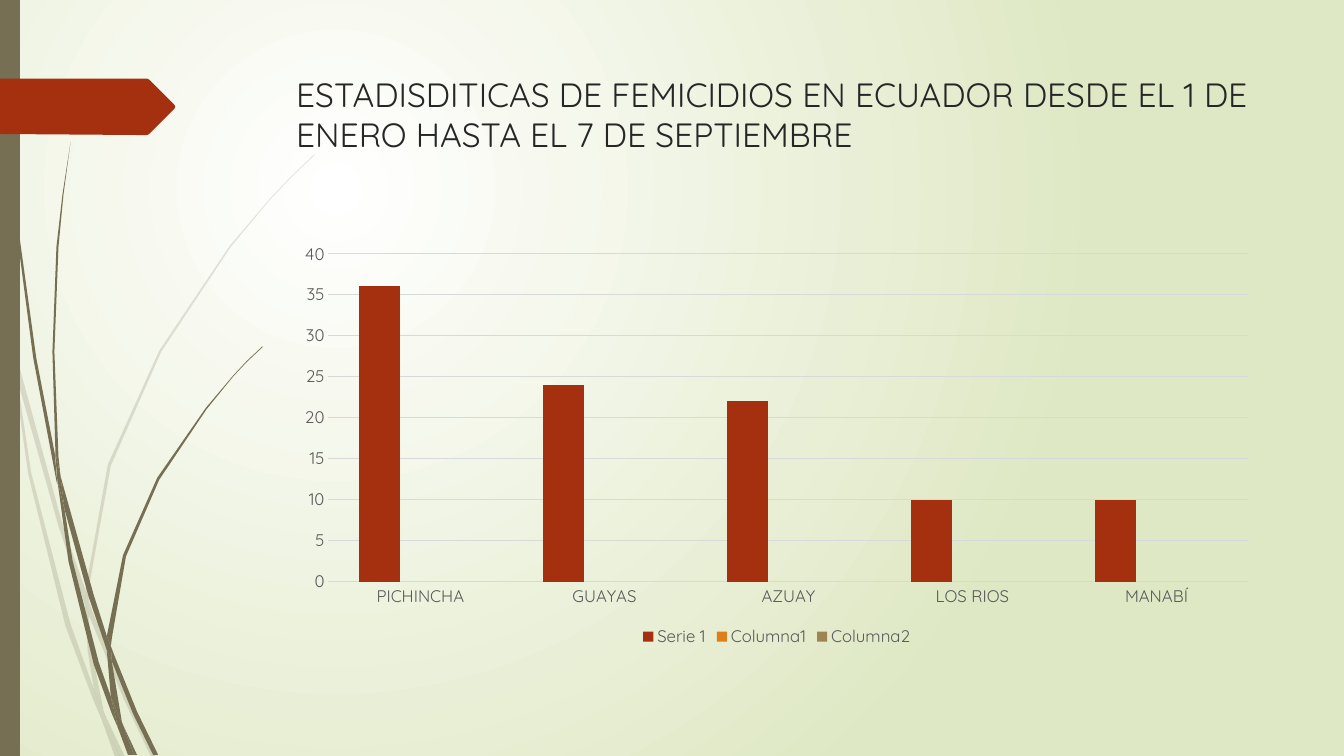
"""Build the slide on femicide statistics in Ecuador."""
from dataclasses import dataclass

from lxml import etree
from pptx import Presentation, util as u
from pptx.chart import data as chart_data
from pptx.dml.color import RGBColor
from pptx.enum import chart as ch, shapes, text
from pptx.oxml import ns


@dataclass(frozen=True)
class Theme:
    font: str = "Quicksand"
    title_size: int = 24
    label_size: int = 12
    title: str = "262626"
    label: str = "595959"
    grid: str = "D9D9D9"
    stem: str = "766F54"
    accent: str = "A53010"
    bars: tuple = ("A53010", "DE7E18", "9F8351")
    backdrop: tuple = ("FFFFFF", "DFE8C4")
    pale: int = 20


HUNDREDTH_INCH = u.Cm(0.0254)

PALE_STEMS = [
    [(11, 350), (9, 322), (0, 282), (0, 299), (10, 344)],
    [(58, 522), (84, 599), (85, 586), (62, 520), (14, 345), (17, 376)],
    [(92, 607), (88, 596), (88, 610), (123, 694), (150, 751), (155, 751), (127, 692)],
    [(119, 751), (124, 751), (105, 711)],
    [(93, 683), (70, 619), (31, 469), (17, 376), (11, 350), (28, 470), (65, 621), (92, 693),
     (101, 714), (99, 707)],
    [(84, 599), (87, 646), (93, 683), (96, 692), (105, 711), (103, 706), (91, 646), (88, 610),
     (88, 608)],
    [(88, 584), (110, 462), (160, 349), (229, 245), (268, 198), (290, 175), (312, 154),
     (312, 153), (289, 175), (268, 197), (228, 244), (158, 348), (107, 461), (85, 584),
     (85, 586), (88, 596)],
    [(101, 714), (114, 751), (119, 751)],
    [(88, 608), (88, 610), (88, 596), (85, 586), (84, 599)],
    [(96, 692), (93, 683), (99, 707), (101, 714), (119, 751), (105, 711)],
]

DARK_STEMS = [
    [(7, 110), (17, 233), (33, 355), (56, 477), (57, 481), (55, 457), (55, 453), (36, 355),
     (19, 232), (8, 109), (5, 48), (4, 0), (3, 0), (4, 48)],
    [(88, 592), (106, 645), (106, 633), (106, 631), (93, 590), (60, 472), (64, 505)],
    [(113, 649), (110, 641), (111, 656), (132, 708), (152, 749), (157, 749), (136, 706)],
    [(110, 691), (98, 657), (72, 556), (64, 505), (57, 477), (68, 557), (93, 659), (111, 708),
     (117, 722), (116, 717)],
    [(60, 472), (58, 453), (54, 349), (58, 245), (63, 193), (70, 141), (62, 193), (56, 245),
     (52, 349), (55, 449)],
    [(133, 749), (136, 749), (122, 719)],
    [(57, 477), (64, 505), (60, 472), (55, 449), (55, 453)],
    [(111, 633), (125, 552), (158, 476), (205, 406), (231, 374), (245, 359), (261, 344),
     (260, 344), (245, 358), (231, 373), (204, 405), (156, 474), (122, 551), (106, 631),
     (110, 641)],
    [(117, 722), (127, 749), (131, 749)],
    [(106, 645), (110, 691), (116, 706), (122, 719), (121, 716), (111, 656), (109, 651)],
    [(106, 645), (109, 651), (111, 656), (110, 641), (106, 631), (106, 633)],
    [(116, 706), (110, 691), (116, 717), (117, 722), (130, 749), (133, 749), (122, 719)],
]

ARROW = [(173, 108), (148, 133), (146, 134), (136, 134), (0, 133), (0, 78), (146, 78),
         (148, 79), (173, 104), (174, 106)]

TITLE = "ESTADISDITICAS DE FEMICIDIOS EN ECUADOR DESDE EL 1 DE ENERO HASTA EL 7 DE SEPTIEMBRE"
PROVINCES = ["PICHINCHA", "GUAYAS", "AZUAY", "LOS RIOS", "MANABÍ"]
SERIES = {
    "Serie 1": [36, 24, 22, 10, 10],
    "Columna1": [None] * len(PROVINCES),
    "Columna2": [None] * len(PROVINCES),
}


def format_font(font, size, color, name):
    font.size, font.name, font.bold = u.Pt(size), name, False
    font.color.rgb = RGBColor.from_string(color)


def write(frame, words, *, size, color, font, align=text.PP_ALIGN.LEFT,
          anchor=text.MSO_ANCHOR.TOP):
    frame.word_wrap = True
    frame.auto_size = text.MSO_AUTO_SIZE.NONE
    frame.vertical_anchor = anchor
    paragraph = frame.paragraphs[0]
    paragraph.alignment = align
    run = paragraph.add_run()
    run.text = words
    format_font(run.font, size, color, font)


class SlideBuilder:
    def __init__(self, slide, theme):
        self.slide, self.theme = slide, theme

    def backdrop(self):
        fill = self.slide.background.fill
        fill.gradient()
        for stop, color, position in zip(fill.gradient_stops, self.theme.backdrop, (0, 1)):
            stop.color.rgb = RGBColor.from_string(color)
            stop.position = position
        gradient = self.slide.element.find(".//" + ns.qn("a:gradFill"))
        gradient.remove(gradient.find(ns.qn("a:lin")))
        glow = etree.SubElement(gradient, ns.qn("a:path"))
        glow.set("path", "circle")
        center = etree.SubElement(glow, ns.qn("a:fillToRect"))
        for side, percent in zip("ltrb", (50, 50, 100, 100)):
            center.set(side, str(percent * 1000))

    def paint(self, shape, color, opacity=100):
        shape.shadow.inherit = False
        shape.line.fill.background()
        shape.fill.solid()
        shape.fill.fore_color.rgb = RGBColor.from_string(color)
        if opacity < 100:
            tint = shape.element.spPr.find(".//" + ns.qn("a:srgbClr"))
            etree.SubElement(tint, ns.qn("a:alpha")).set("val", str(opacity * 1000))

    def outline(self, points, color, opacity=100):
        start, *rest = points
        builder = self.slide.shapes.build_freeform(*start, scale=HUNDREDTH_INCH)
        builder.add_line_segments(rest, close=True)
        self.paint(builder.convert_to_shape(), color, opacity)

    def band(self, left, top, width, height, color):
        box = map(u.Cm, (left, top, width, height))
        self.paint(self.slide.shapes.add_shape(shapes.MSO_SHAPE.RECTANGLE, *box), color)

    def title(self, words, left, top, width, height):
        heading = self.slide.shapes.title
        heading.left, heading.top = u.Cm(left), u.Cm(top)
        heading.width, heading.height = u.Cm(width), u.Cm(height)
        write(heading.text_frame, words, size=self.theme.title_size,
              color=self.theme.title, font=self.theme.font)

    def columns(self, categories, series, left, top, width, height):
        theme = self.theme
        figures = chart_data.CategoryChartData()
        figures.categories = categories
        for name, values in series.items():
            figures.add_series(name, values)
        box = map(u.Cm, (left, top, width, height))
        chart = self.slide.shapes.add_chart(
            ch.XL_CHART_TYPE.COLUMN_CLUSTERED, *box, figures).chart
        format_font(chart.font, theme.label_size, theme.label, theme.font)
        chart.has_title = False
        chart.has_legend = True
        chart.legend.position = ch.XL_LEGEND_POSITION.BOTTOM
        chart.legend.include_in_layout = False
        format_font(chart.legend.font, theme.label_size, theme.label, theme.font)

        plot = chart.plots[0]
        plot.vary_by_categories = False
        plot.gap_width, plot.overlap = 150, 0
        for bars, color in zip(plot.series, theme.bars):
            bars.format.fill.solid()
            bars.format.fill.fore_color.rgb = RGBColor.from_string(color)

        for axis in (chart.category_axis, chart.value_axis):
            axis.major_tick_mark = axis.minor_tick_mark = ch.XL_TICK_MARK.NONE
            axis.format.line.fill.background()
            format_font(axis.tick_labels.font, theme.label_size, theme.label, theme.font)
        scale = chart.value_axis
        scale.minimum_scale, scale.maximum_scale, scale.major_unit = 0, 40, 5
        scale.has_major_gridlines = True
        grid = scale.major_gridlines.format.line
        grid.width = u.Pt(0.75)
        grid.color.rgb = RGBColor.from_string(theme.grid)


def main():
    theme = Theme()
    deck = Presentation()
    deck.slide_width, deck.slide_height = u.Cm(33.87), u.Cm(19.05)
    page = SlideBuilder(deck.slides.add_slide(deck.slide_layouts[5]), theme)
    page.backdrop()
    for stem in PALE_STEMS:
        page.outline(stem, theme.stem, theme.pale)
    for stem in DARK_STEMS:
        page.outline(stem, theme.stem)
    page.band(0, 0, 0.5, 19.05, theme.stem)
    page.outline(ARROW, theme.accent)
    page.title(TITLE, 7.21, 1.73, 24.77, 3.56)
    page.columns(PROVINCES, SERIES, 7.19, 5.92, 24.77, 10.49)
    deck.save("out.pptx")


if __name__ == "__main__":
    main()
